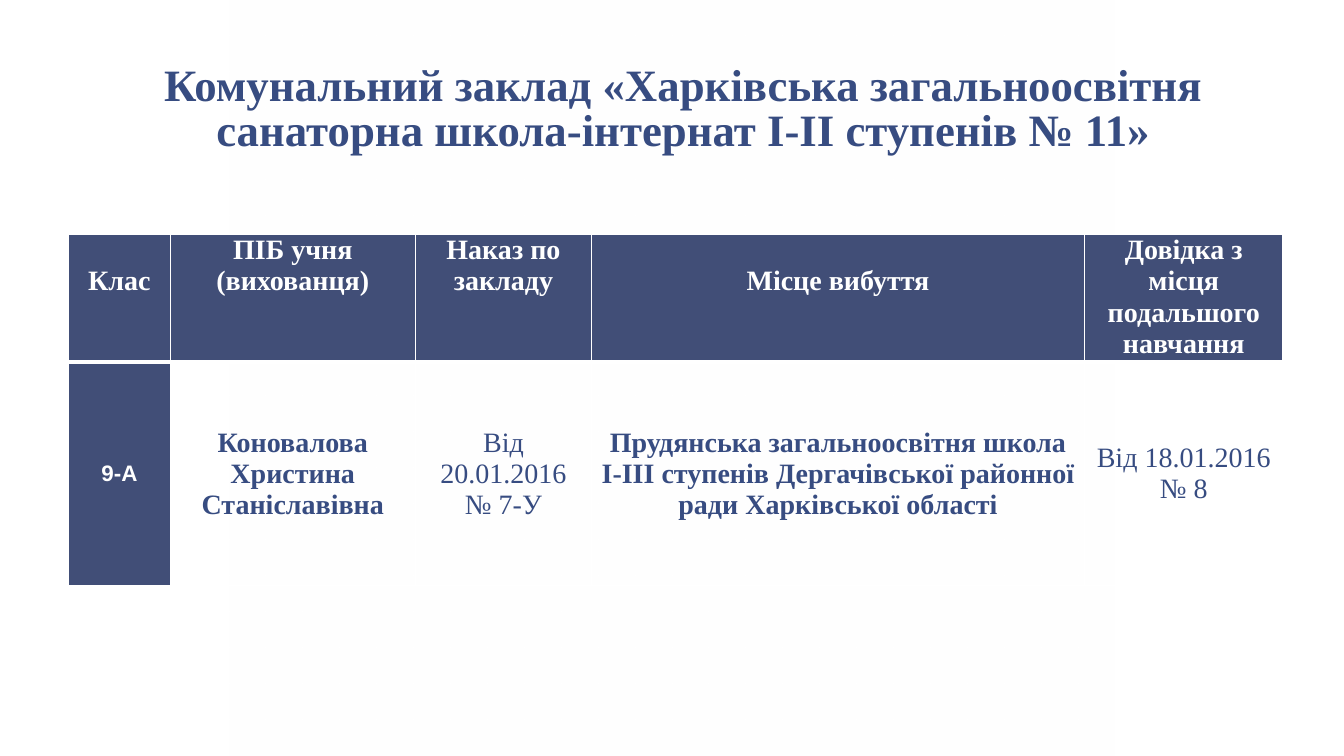
from lxml import etree
from pptx import Presentation
from pptx.dml.color import RGBColor
from pptx.enum import shapes, text
from pptx.oxml import ns
from pptx.util import Pt

COLORS = {"white": "FFFFFF", "header": "414E77", "ink": "374C81"}


def color(name):
    return RGBColor.from_string(COLORS[name])


def add_border(cell, side, width):
    line = etree.SubElement(cell._tc.get_or_add_tcPr(), ns.qn(f"a:ln{side}"), w=str(Pt(width)))
    fill = etree.SubElement(line, ns.qn("a:solidFill"))
    etree.SubElement(fill, ns.qn("a:srgbClr"), val=COLORS["white"])


deck = Presentation()
deck.slide_width, deck.slide_height = Pt(960), Pt(540)
page = deck.slides.add_slide(deck.slide_layouts[5])
page.background.fill.solid()
page.background.fill.fore_color.rgb = color("white")

title = page.shapes.title
title.left, title.top, title.width, title.height = Pt(37.44), Pt(25.92), Pt(901.44), Pt(90.72)
frame = title.text_frame
frame.text = "Комунальний заклад «Харківська загальноосвітня санаторна школа-інтернат І-ІІ ступенів № 11»"
frame.word_wrap = True
frame.auto_size = text.MSO_AUTO_SIZE.NONE
frame.vertical_anchor = text.MSO_ANCHOR.BOTTOM
frame.margin_left = frame.margin_right = Pt(9.36)
frame.margin_top = frame.margin_bottom = Pt(5.04)
para = frame.paragraphs[0]
para.alignment = text.PP_ALIGN.CENTER
para.line_spacing = 0.85
para.font.name, para.font.size, para.font.bold = "Times New Roman", Pt(32), True
para.font.color.rgb = color("ink")

panel = page.shapes.add_shape(shapes.MSO_SHAPE.RECTANGLE, Pt(164.16), 0, Pt(632.16), Pt(540))
panel.shadow.inherit = False
panel.line.fill.background()
panel.fill.gradient()
panel.fill.gradient_angle = 230
for stop in panel.fill.gradient_stops:
    stop.color.rgb = color("white")
last_stop = panel.element.findall(".//" + ns.qn("a:srgbClr"))[-1]
etree.SubElement(last_stop, ns.qn("a:alpha"), val="55000")
title.element.addprevious(panel.element)

ROWS = [
    ["Клас", "ПІБ учня (вихованця)", "Наказ по закладу", "Місце вибуття",
     "Довідка з місця подальшого навчання"],
    ["9-А", "Коновалова Христина Станіславівна", "Від 20.01.2016\n№ 7-У",
     "Прудянська загальноосвітня школа І-ІІІ ступенів Дергачівської районної ради Харківської області",
     "Від 18.01.2016\n№ 8"],
]
WIDTHS = [72.72, 174.96, 126, 352.08, 141.84]
HEIGHTS = [90.72, 159.84]
LOWERED_HEADERS = ("Клас", "Місце вибуття")

table = page.shapes.add_table(2, 5, Pt(48.96), Pt(167.76), Pt(sum(WIDTHS)), Pt(sum(HEIGHTS))).table
table.first_row = table.horz_banding = False
for column, width in zip(table.columns, WIDTHS):
    column.width = Pt(width)
for row, height in zip(table.rows, HEIGHTS):
    row.height = Pt(height)

for r, words in enumerate(ROWS):
    for c, wording in enumerate(words):
        cell = table.cell(r, c)
        cell.text = wording
        cell.margin_left = cell.margin_right = Pt(4.32)
        cell.margin_top = Pt(22.2 if wording in LOWERED_HEADERS else 0)
        cell.margin_bottom = 0
        cell.vertical_anchor = text.MSO_ANCHOR.MIDDLE if r else text.MSO_ANCHOR.TOP
        for side, width in zip("LRTB", (1, 1, 3 if r else 1, 1 if r else 3)):
            add_border(cell, side, width)
        shaded = r == 0 or c == 0
        if shaded:
            cell.fill.solid()
            cell.fill.fore_color.rgb = color("header")
        else:
            cell.fill.background()
        class_name = r == 1 and c == 0
        for para in cell.text_frame.paragraphs:
            para.alignment = text.PP_ALIGN.CENTER
            para.font.name = "Arial" if class_name else "Times New Roman"
            para.font.size = Pt(16 if class_name else 20)
            para.font.bold = r == 0 or c not in (2, 4)
            para.font.color.rgb = color("white" if shaded else "ink")

deck.save("out.pptx")
